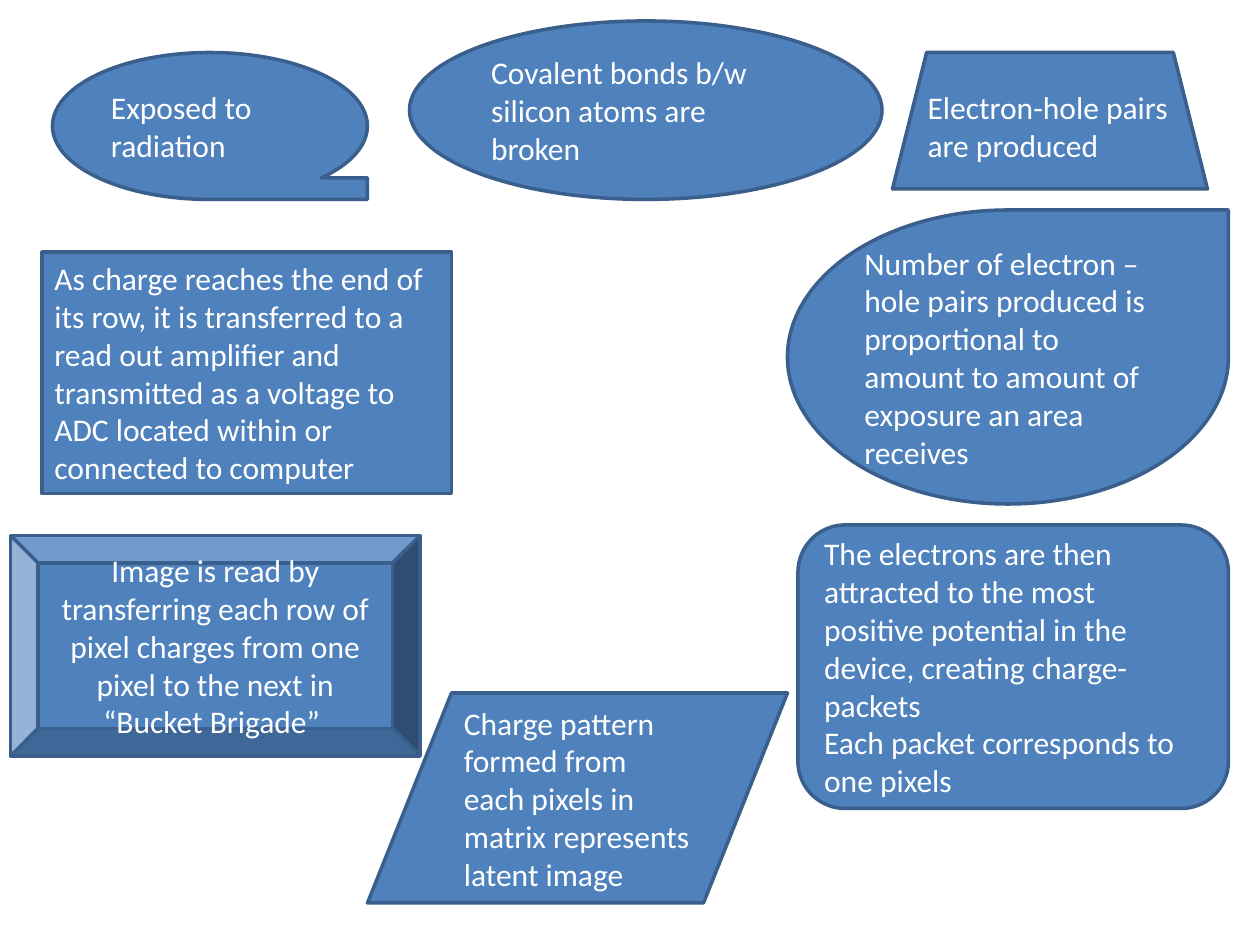
from pptx import Presentation
from pptx import util as u
from pptx.dml.color import RGBColor
from pptx.enum import shapes, text

PX = u.Inches(1) // 96
COLORS = {"fill": "4F81BD", "outline": "3A5F8C", "text": "FFFFFF"}
KIND = shapes.MSO_SHAPE
LEFT, CENTER = text.PP_ALIGN.LEFT, text.PP_ALIGN.CENTER

# Preset, (left, top, width, height) in px, alignment, wording; back to front.
STEPS = [
    (KIND.OVAL, (312, 16, 360, 136), LEFT,
     "Covalent bonds b/w silicon atoms are broken"),
    (KIND.TRAPEZOID, (680, 40, 240, 104), LEFT,
     "Electron-hole pairs are produced"),
    (KIND.ROUNDED_RECTANGLE, (608, 400, 328, 216), LEFT,
     "The electrons are then attracted to the most positive potential "
     "in the device, creating charge-packets\n"
     "Each packet corresponds to one pixels"),
    (KIND.FLOWCHART_DATA, (280, 528, 320, 160), LEFT,
     "Charge pattern formed from each pixels in matrix represents latent image"),
    (KIND.FLOWCHART_SEQUENTIAL_ACCESS_STORAGE, (40, 40, 240, 112), LEFT,
     "Exposed to radiation"),
    (KIND.BEVEL, (8, 408, 312, 168), CENTER,
     "Image is read by transferring each row of pixel charges "
     "from one pixel to the next in “Bucket Brigade” "),
    (KIND.RECTANGLE, (32, 192, 312, 184), LEFT,
     "As charge reaches the end of its row, it is transferred to a read out "
     "amplifier and transmitted as a voltage to ADC located within or "
     "connected to computer"),
    (KIND.TEAR, (600, 160, 336, 224), LEFT,
     "Number of electron –hole pairs produced is proportional to amount "
     "to amount of exposure an area receives"),
]


def color(name):
    return RGBColor.from_string(COLORS[name])


def write_text(frame, wording, alignment):
    frame.text = wording
    frame.word_wrap = True
    frame.vertical_anchor = text.MSO_ANCHOR.MIDDLE
    for paragraph in frame.paragraphs:
        paragraph.alignment = alignment
        for run in paragraph.runs:
            run.font.name = "Calibri"
            run.font.size = u.Pt(18)
            run.font.color.rgb = color("text")


def add_step(slide, kind, box, alignment, wording):
    step = slide.shapes.add_shape(kind, *(n * PX for n in box))
    step.shadow.inherit = False
    step.fill.solid()
    step.fill.fore_color.rgb = color("fill")
    step.line.color.rgb = color("outline")
    step.line.width = u.Pt(2)
    write_text(step.text_frame, wording, alignment)


def main():
    deck = Presentation()
    deck.slide_width, deck.slide_height = 960 * PX, 720 * PX
    slide = deck.slides.add_slide(deck.slide_layouts[6])
    for step in STEPS:
        add_step(slide, *step)
    deck.save("out.pptx")


if __name__ == "__main__":
    main()
